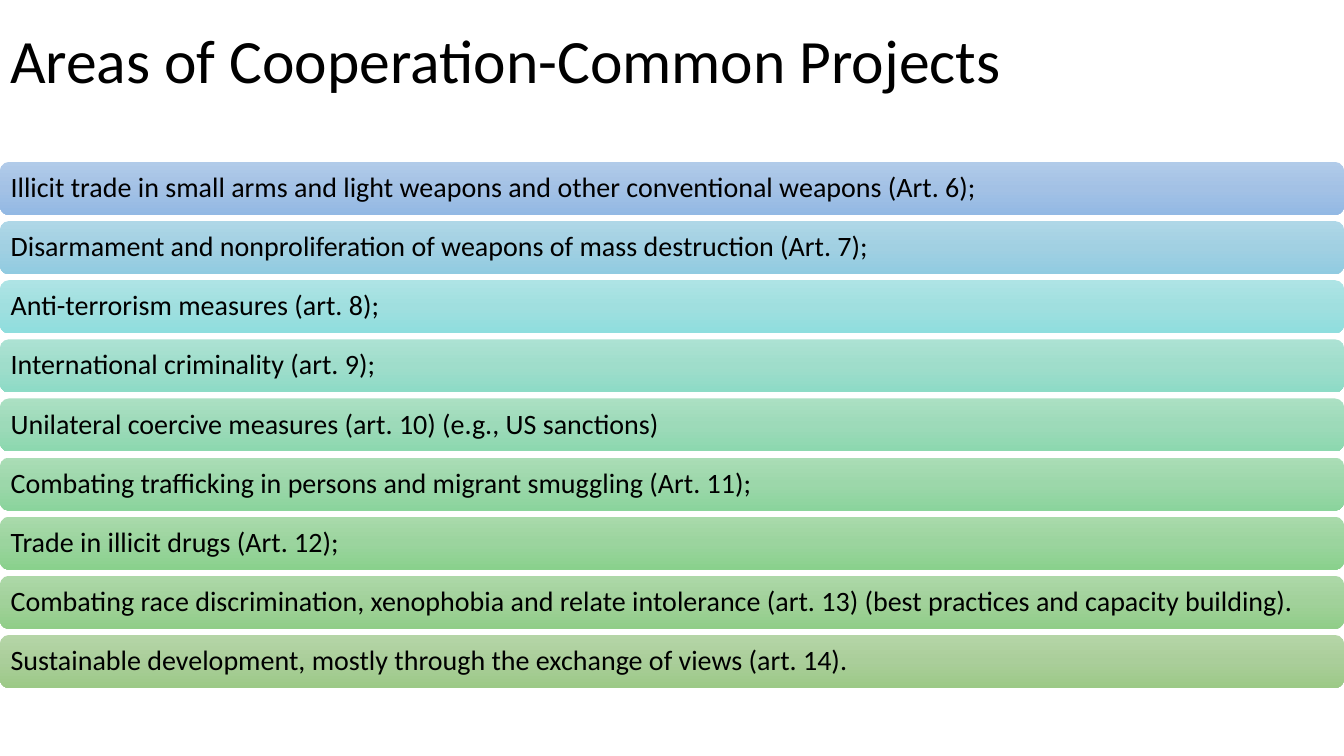
import copy

import pptx
import pptx.dml.color
import pptx.enum.shapes
import pptx.enum.text
import pptx.oxml.ns
import pptx.util

RGBColor = pptx.dml.color.RGBColor
BLACK = RGBColor(0x00, 0x00, 0x00)
STOP_POSITIONS = (0, 0.5, 1)
# Each bar: its text, then the top, middle and bottom colours of its gradient.
BARS = [
    ("Illicit trade in small arms and light weapons and other conventional weapons (Art. 6);",
     RGBColor(0xB1, 0xCB, 0xE9), RGBColor(0xA3, 0xC1, 0xE5), RGBColor(0x93, 0xB9, 0xE4)),
    ("Disarmament and nonproliferation of weapons of mass destruction (Art. 7);",
     RGBColor(0xAF, 0xD7, 0xE7), RGBColor(0xA1, 0xD0, 0xE2), RGBColor(0x91, 0xCB, 0xE1)),
    ("Anti-terrorism measures (art. 8);",
     RGBColor(0xAE, 0xE4, 0xE5), RGBColor(0xA0, 0xDF, 0xDF), RGBColor(0x8F, 0xDE, 0xDE)),
    ("International criminality (art. 9);",
     RGBColor(0xAC, 0xE2, 0xD3), RGBColor(0x9F, 0xDD, 0xCB), RGBColor(0x8D, 0xDB, 0xC6)),
    ("Unilateral coercive measures (art. 10) (e.g., US sanctions)",
     RGBColor(0xAB, 0xE0, 0xC3), RGBColor(0x9D, 0xDA, 0xB9), RGBColor(0x8C, 0xD8, 0xAF)),
    ("Combating trafficking in persons and migrant smuggling (Art. 11);",
     RGBColor(0xAA, 0xDD, 0xB6), RGBColor(0x9C, 0xD7, 0xAA), RGBColor(0x8A, 0xD4, 0x9C)),
    ("Trade in illicit drugs (Art. 12);",
     RGBColor(0xA9, 0xDA, 0xAB), RGBColor(0x9B, 0xD4, 0x9E), RGBColor(0x89, 0xD1, 0x8C)),
    ("Combating race discrimination, xenophobia and relate intolerance (art. 13) "
     "(best practices and capacity building).",
     RGBColor(0xAD, 0xD8, 0xA8), RGBColor(0xA1, 0xD1, 0x9A), RGBColor(0x90, 0xCD, 0x88)),
    ("Sustainable development, mostly through the exchange of views (art. 14).",
     RGBColor(0xB5, 0xD5, 0xA7), RGBColor(0xAA, 0xCE, 0x9A), RGBColor(0x9C, 0xC9, 0x87)),
]
SLIDE_WIDTH, SLIDE_HEIGHT = 1344, 756
FIRST_TOP, LAST_TOP, BAR_HEIGHT = 162, 635, 53
BAR_PITCH = (LAST_TOP - FIRST_TOP) / (len(BARS) - 1)


def px(length):
    """Turn pixels, 100.8 to the inch, into EMU."""
    return pptx.util.Emu(round(length * 914400 / 100.8))


def write_line(shape, text, size, inset):
    """Put one left-aligned, vertically centred line of text in a shape."""
    frame = shape.text_frame
    frame.word_wrap = True
    frame.vertical_anchor = pptx.enum.text.MSO_ANCHOR.MIDDLE
    frame.margin_left = frame.margin_right = px(inset)
    frame.margin_top = frame.margin_bottom = px(5)
    paragraph = frame.paragraphs[0]
    paragraph.text = text
    paragraph.alignment = pptx.enum.text.PP_ALIGN.LEFT
    paragraph.line_spacing = 0.9
    paragraph.font.name = "Calibri"
    paragraph.font.size = pptx.util.Pt(size)
    paragraph.font.color.rgb = BLACK


presentation = pptx.Presentation()
presentation.slide_width = px(SLIDE_WIDTH)
presentation.slide_height = px(SLIDE_HEIGHT)
slide = presentation.slides.add_slide(presentation.slide_layouts[6])

title = slide.shapes.add_textbox(px(0), px(9), px(1159), px(110))
write_line(title, "Areas of Cooperation-Common Projects", 44, 10)

for index, (text, *colors) in enumerate(BARS):
    bar = slide.shapes.add_shape(
        pptx.enum.shapes.MSO_SHAPE.ROUNDED_RECTANGLE,
        px(0), px(FIRST_TOP + index * BAR_PITCH), px(SLIDE_WIDTH), px(BAR_HEIGHT))
    bar.shadow.inherit = False
    bar.line.fill.background()
    bar.fill.gradient()
    bar.fill.gradient_angle = 270
    # A new gradient has two stops; the third is added in XML.
    stop_list = next(bar._element.iter(pptx.oxml.ns.qn("a:gsLst")))
    stop_list.append(copy.deepcopy(stop_list[-1]))
    for stop, position, color in zip(bar.fill.gradient_stops, STOP_POSITIONS, colors):
        stop.position = position
        stop.color.rgb = color
    write_line(bar, text, 20, 8)

presentation.save("out.pptx")
